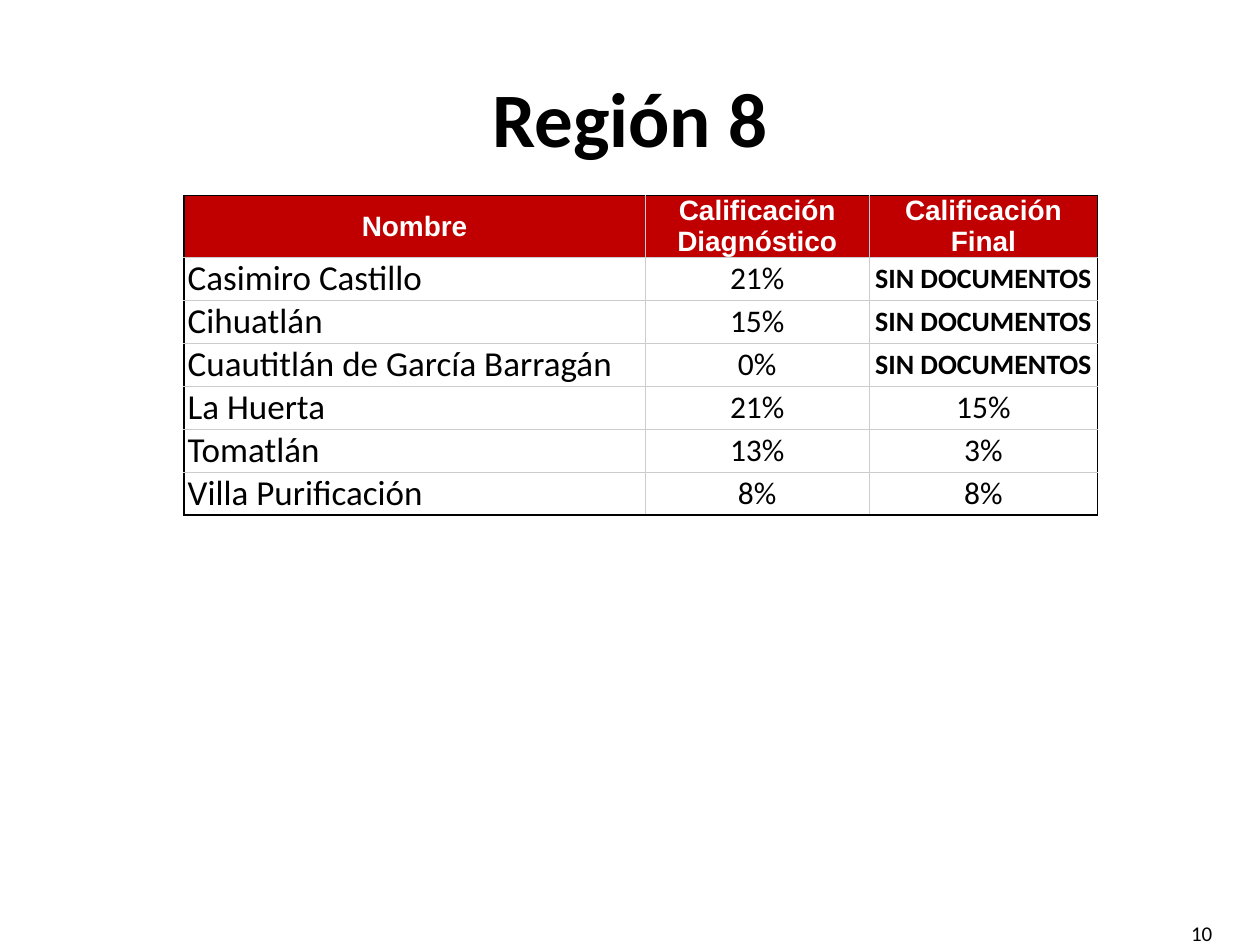
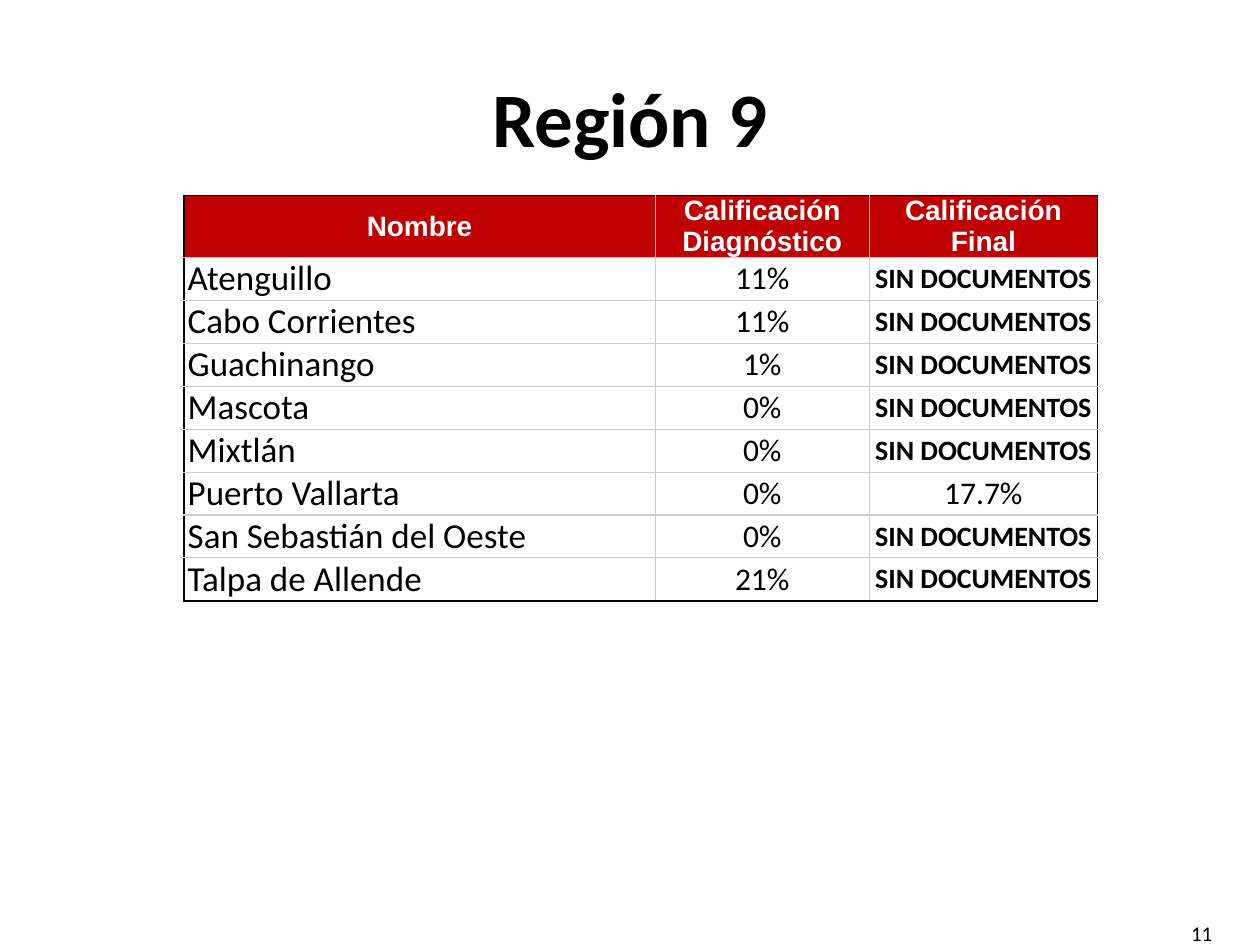
from lxml import etree
from pptx import Presentation
from pptx.dml.color import RGBColor
from pptx.enum.text import MSO_ANCHOR, PP_ALIGN
from pptx.oxml.ns import qn
from pptx.util import Inches, Pt

MIDDLE = MSO_ANCHOR.MIDDLE
LEFT, CENTER, RIGHT = PP_ALIGN.LEFT, PP_ALIGN.CENTER, PP_ALIGN.RIGHT

NO_DOCUMENTS = "SIN DOCUMENTOS"
HEADINGS = ("Nombre", "Calificación Diagnóstico", "Calificación Final")
REGIONS = [
    {
        "title": "Región 8",
        "page": 10,
        "columns": (3.66, 1.78, 1.81),
        "towns": [
            ("Casimiro Castillo", "21%", NO_DOCUMENTS),
            ("Cihuatlán", "15%", NO_DOCUMENTS),
            ("Cuautitlán de García Barragán", "0%", NO_DOCUMENTS),
            ("La Huerta", "21%", "15%"),
            ("Tomatlán", "13%", "3%"),
            ("Villa Purificación", "8%", "8%"),
        ],
    },
    {
        "title": "Región 9",
        "page": 11,
        "columns": (3.74, 1.7, 1.81),
        "towns": [
            ("Atenguillo", "11%", NO_DOCUMENTS),
            ("Cabo Corrientes", "11%", NO_DOCUMENTS),
            ("Guachinango", "1%", NO_DOCUMENTS),
            ("Mascota", "0%", NO_DOCUMENTS),
            ("Mixtlán", "0%", NO_DOCUMENTS),
            ("Puerto Vallarta", "0%", "17.7%"),
            ("San Sebastián del Oeste", "0%", NO_DOCUMENTS),
            ("Talpa de Allende", "21%", NO_DOCUMENTS),
        ],
    },
]

BLACK, WHITE, RED, GREY = "000000", "FFFFFF", "C00000", "CCCCCC"
OUTER_LINE, INNER_LINE = (BLACK, 1), (GREY, 0.75)
TABLE_LEFT, TABLE_TOP = 1.46, 1.55
HEADING_HEIGHT, TOWN_HEIGHT = 0.49, 0.34

TITLE_STYLE = {"name": "Calibri", "size": Pt(44), "bold": True}
PAGE_STYLE = {"name": "Calibri", "size": Pt(12), "bold": False}
HEADING_STYLE = {"name": "Arial", "size": Pt(16), "bold": True}
NAME_STYLE = {"name": "Calibri", "size": Pt(20), "bold": False}
SCORE_STYLE = {"name": "Calibri", "size": Pt(18), "bold": False}
MISSING_STYLE = {"name": "Calibri", "size": Pt(16), "bold": True}
CELL_FORMAT = {
    "margin_left": Inches(0.03),
    "margin_right": Inches(0.03),
    "margin_top": 0,
    "margin_bottom": 0,
    "vertical_anchor": MIDDLE,
}


def rgb(color):
    return RGBColor.from_string(color)


def set_all(target, values):
    for attribute, value in values.items():
        setattr(target, attribute, value)


def write(frame, text, style, align, color=BLACK):
    frame.text = text
    paragraph = frame.paragraphs[0]
    paragraph.alignment = align
    font = paragraph.runs[0].font
    set_all(font, style)
    font.color.rgb = rgb(color)


def add_borders(cell, lines):
    """Draw the cell's left, right, top and bottom lines, in that order."""
    properties = cell._tc.get_or_add_tcPr()
    for side, (color, width) in zip("LRTB", lines):
        line = etree.SubElement(properties, qn(f"a:ln{side}"), w=str(Pt(width)))
        fill = etree.SubElement(line, qn("a:solidFill"))
        etree.SubElement(fill, qn("a:srgbClr"), val=color)


def cell_style(text, is_heading, is_name):
    if is_heading:
        return HEADING_STYLE
    if is_name:
        return NAME_STYLE
    return MISSING_STYLE if text == NO_DOCUMENTS else SCORE_STYLE


def add_scores(slide, columns, towns):
    rows = [HEADINGS, *towns]
    heights = [HEADING_HEIGHT] + [TOWN_HEIGHT] * len(towns)
    table = slide.shapes.add_table(
        len(rows), len(columns), Inches(TABLE_LEFT), Inches(TABLE_TOP),
        Inches(sum(columns)), Inches(sum(heights))).table
    for column, width in zip(table.columns, columns):
        column.width = Inches(width)
    for row, height in zip(table.rows, heights):
        row.height = Inches(height)

    last_row, last_column = len(rows) - 1, len(columns) - 1
    for r, row in enumerate(rows):
        for c, text in enumerate(row):
            cell = table.cell(r, c)
            is_heading, is_name = r == 0, r > 0 and c == 0
            set_all(cell, CELL_FORMAT)
            on_edge = (c == 0, c == last_column, r == 0, r == last_row)
            add_borders(cell, [OUTER_LINE if edge else INNER_LINE for edge in on_edge])
            cell.fill.solid()
            cell.fill.fore_color.rgb = rgb(RED if is_heading else WHITE)
            write(cell.text_frame, text, cell_style(text, is_heading, is_name),
                  LEFT if is_name else CENTER, WHITE if is_heading else BLACK)


def add_title(slide, text):
    title = slide.shapes.title
    set_all(title, {"left": Inches(0.5), "top": Inches(0.3),
                    "width": Inches(9), "height": Inches(1.25)})
    title.text_frame.vertical_anchor = MIDDLE
    write(title.text_frame, text, TITLE_STYLE, CENTER)


def add_page_number(slide, page):
    frame = slide.shapes.add_textbox(
        Inches(7.39), Inches(7.21), Inches(2.33), Inches(0.4)).text_frame
    set_all(frame, {"word_wrap": True, "vertical_anchor": MIDDLE})
    write(frame, str(page), PAGE_STYLE, RIGHT)


def main():
    prs = Presentation()
    prs.slide_width, prs.slide_height = Inches(10), Inches(7.5)
    title_only = prs.slide_layouts[5]
    for region in REGIONS:
        slide = prs.slides.add_slide(title_only)
        add_title(slide, region["title"])
        add_scores(slide, region["columns"], region["towns"])
        add_page_number(slide, region["page"])
    prs.save("out.pptx")


if __name__ == "__main__":
    main()
